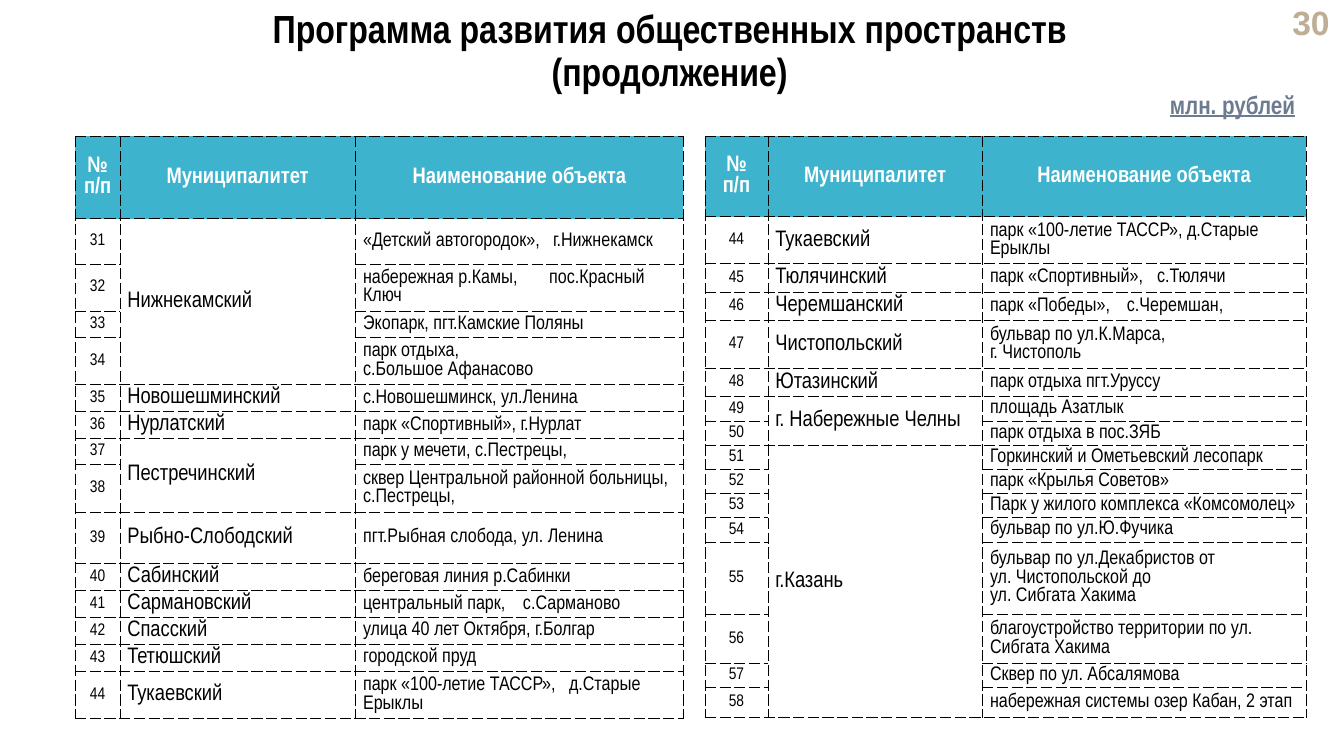
from lxml import etree
from pptx import Presentation
from pptx import util as u
from pptx.dml.color import RGBColor
from pptx.enum import text
from pptx.oxml import ns

COLORS = {"black": "000000", "white": "FFFFFF", "header": "3DB3CD",
          "units": "6C7B90", "number": "BFAE96"}
NARROW = "Arial Narrow"
TITLE = "Программа развития общественных пространств\n(продолжение)"
HEADINGS = ("№ п/п", "Муниципалитет", "Наименование объекта")

# Each object: row height, wording and, where it has a tab, the tab stop (cm)
LEFT = [
    ("Нижнекамский", [(1.14, "«Детский автогородок»,\tг.Нижнекамск", 4.79),
                      (1.19, "набережная р.Камы,\tпос.Красный Ключ", 4.69),
                      (0.66, "Экопарк, пгт.Камские Поляны"),
                      (1.19, "парк отдыха,\nс.Большое Афанасово")]),
    ("Новошешминский", [(0.68, "с.Новошешминск, ул.Ленина")]),
    ("Нурлатский", [(0.68, "парк «Спортивный», г.Нурлат")]),
    ("Пестречинский", [(0.66, "парк у мечети, с.Пестрецы,"),
                       (1.19, "сквер Центральной районной больницы, с.Пестрецы,")]),
    ("Рыбно-Слободский", [(1.3, "пгт.Рыбная слобода, ул. Ленина")]),
    ("Сабинский", [(0.68, "береговая линия р.Сабинки")]),
    ("Сармановский", [(0.68, "центральный парк,\tс.Сарманово", 4.03)]),
    ("Спасский", [(0.68, "улица 40 лет Октября, г.Болгар")]),
    ("Тетюшский", [(0.68, "городской пруд")]),
    ("Тукаевский", [(1.19, "парк «100-летие ТАССР»,\tд.Старые Ерыклы", 5.19)]),
]
RIGHT = [
    ("Тукаевский", [(0.96, "парк «100-летие ТАССР», д.Старые Ерыклы")]),
    ("Тюлячинский", [(0.71, "парк «Спортивный»,\tс.Тюлячи", 4.21)]),
    ("Черемшанский", [(0.71, "парк «Победы»,\tс.Черемшан,", 3.45)]),
    ("Чистопольский", [(1.22, "бульвар по ул.К.Марса,\nг. Чистополь")]),
    ("Ютазинский", [(0.71, "парк отдыха пгт.Уруссу")]),
    ("г. Набережные Челны", [(0.61, "площадь Азатлык"),
                             (0.61, "парк отдыха в пос.ЗЯБ")]),
    ("г.Казань", [(0.61, "Горкинский и Ометьевский лесопарк"),
                  (0.61, "парк «Крылья Советов»"),
                  (0.61, "Парк у жилого комплекса «Комсомолец»"),
                  (0.61, "бульвар по ул.Ю.Фучика"),
                  (1.83, "бульвар по ул.Декабристов от\nул. Чистопольской до\nул. Сибгата Хакима"),
                  (1.22, "благоустройство территории по ул. Сибгата Хакима"),
                  (0.61, "Сквер по ул. Абсалямова"),
                  (0.76, "набережная системы озер Кабан, 2 этап")]),
]
TABLES = [
    dict(left=1.9, first=31, header=2.08, widths=(1.12, 5.94, 8.26), groups=LEFT),
    dict(left=17.77, first=44, header=2.03, widths=(1.58, 5.41, 8.15), groups=RIGHT),
]
TABLE_TOP = 3.43
BODY_SIZES = (12, 16, 14)


def rgb(name):
    return RGBColor.from_string(COLORS[name])


def write(paragraph, words, size, color, bold=False, font=NARROW, align="LEFT", spacing=1.0):
    paragraph.text = words
    paragraph.alignment = getattr(text.PP_ALIGN, align)
    paragraph.line_spacing = spacing
    paragraph.font.size = u.Pt(size)
    paragraph.font.name = font
    paragraph.font.bold = bold
    paragraph.font.color.rgb = rgb(color)


def add_label(slide, box, words, size, color, anchor="TOP", **style):
    frame = slide.shapes.add_textbox(*(u.Cm(side) for side in box)).text_frame
    frame.word_wrap = True
    frame.vertical_anchor = getattr(text.MSO_ANCHOR, anchor)
    write(frame.paragraphs[0], words, size, color, bold=True, **style)
    return frame.paragraphs[0]


def add_borders(cell):
    properties = cell._tc.get_or_add_tcPr()
    for place, side in enumerate(("a:lnL", "a:lnR", "a:lnT", "a:lnB")):
        line = etree.Element(ns.qn(side), w=str(u.Pt(0.5)))
        fill = etree.SubElement(line, ns.qn("a:solidFill"))
        etree.SubElement(fill, ns.qn("a:srgbClr"), val=COLORS["black"])
        etree.SubElement(line, ns.qn("a:prstDash"), val="sysDash")
        properties.insert(place, line)


def add_tab(paragraph, stop):
    tabs = etree.SubElement(paragraph._p.get_or_add_pPr(), ns.qn("a:tabLst"))
    etree.SubElement(tabs, ns.qn("a:tab"), pos=str(u.Cm(stop)), algn="l")


def fill_cell(cell, words, column, header=False, stop=None):
    cell.margin_left = cell.margin_right = u.Cm(0.19)
    cell.margin_top = cell.margin_bottom = 0
    cell.vertical_anchor = text.MSO_ANCHOR.MIDDLE
    if header:
        cell.fill.solid()
        cell.fill.fore_color.rgb = rgb("header")
    else:
        cell.fill.background()
    add_borders(cell)
    paragraph = cell.text_frame.paragraphs[0]
    if stop:
        add_tab(paragraph, stop)
    write(paragraph, words, 16 if header else BODY_SIZES[column],
          "white" if header else "black", bold=header,
          align="CENTER" if header or column == 0 else "LEFT")


def add_objects(slide, left, first, header, widths, groups):
    heights = [header] + [item[0] for _, items in groups for item in items]
    table = slide.shapes.add_table(
        len(heights), len(widths), u.Cm(left), u.Cm(TABLE_TOP),
        u.Cm(sum(widths)), u.Cm(sum(heights))).table
    table.first_row = table.horz_banding = False
    for column, width in zip(table.columns, widths):
        column.width = u.Cm(width)
    for row, height in zip(table.rows, heights):
        row.height = u.Cm(height)
    for column, heading in enumerate(HEADINGS):
        fill_cell(table.cell(0, column), heading, column, header=True)
    row = 1
    for municipality, items in groups:
        start = row
        for _, place, *stop in items:
            fill_cell(table.cell(row, 0), str(first + row - 1), 0)
            fill_cell(table.cell(row, 1), municipality if row == start else "", 1)
            fill_cell(table.cell(row, 2), place, 2, stop=stop[0] if stop else None)
            row += 1
        if len(items) > 1:
            table.cell(start, 1).merge(table.cell(row - 1, 1))


def main():
    """Build the slide of public spaces by municipality."""
    deck = Presentation()
    deck.slide_width, deck.slide_height = u.Cm(33.87), u.Cm(19.05)
    slide = deck.slides.add_slide(deck.slide_layouts[6])
    add_label(slide, (31.6, 0.13, 2.16, 0.86), "30", 24, "number",
              anchor="MIDDLE", font="Arial", align="RIGHT")
    add_label(slide, (1.9, 0.13, 29.95, 2.41), TITLE, 28, "black",
              align="CENTER", spacing=0.9)
    for part in TABLES:
        add_objects(slide, **part)
    units = add_label(slide, (28.12, 2.13, 4.77, 0.81), "млн. рублей", 18, "units",
                      align="RIGHT")
    units.font.underline = True
    deck.save("out.pptx")


if __name__ == "__main__":
    main()
